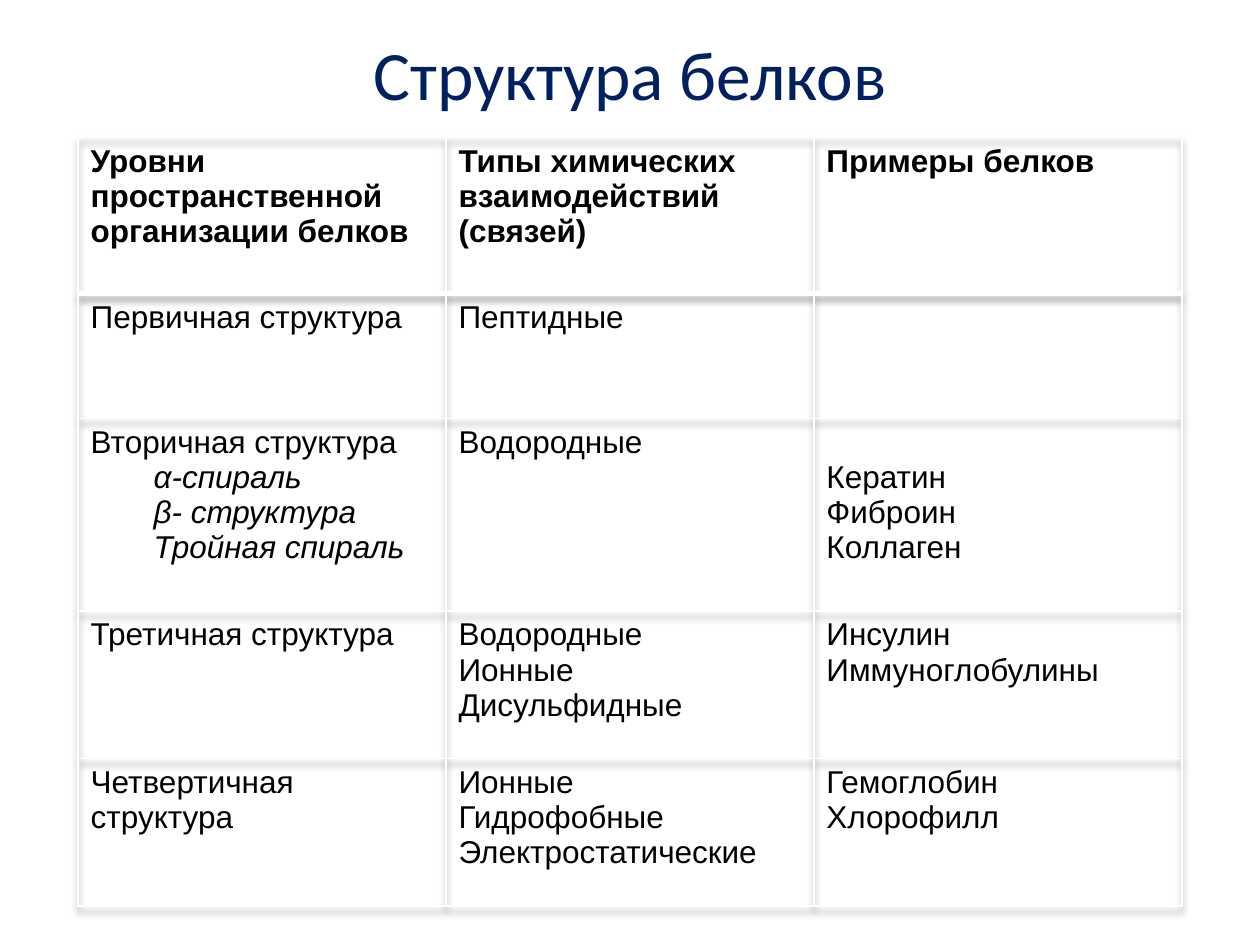
import pptx
import pptx.util
import pptx.dml.color
import pptx.enum.text
import pptx.oxml
import pptx.oxml.ns
from lxml import etree
from pptx.util import Inches, Pt

NAVY = pptx.dml.color.RGBColor(0x00, 0x20, 0x60)
BLACK = pptx.dml.color.RGBColor(0x00, 0x00, 0x00)
WHITE = pptx.dml.color.RGBColor(0xFF, 0xFF, 0xFF)

TITLE = "Структура белков"
ROWS = [
    (1.24, [["Уровни пространственной организации белков"],
            ["Типы химических взаимодействий (связей)"],
            ["Примеры белков"]]),
    (0.99, [["Первичная структура"], ["Пептидные"], []]),
    (1.53, [["Вторичная структура", "α-спираль", "β- структура", "Тройная спираль"],
            ["Водородные"],
            ["Кератин", "Фиброин", "Коллаген"]]),
    (1.17, [["Третичная структура"],
            ["Водородные", "Ионные", "Дисульфидные"],
            ["Инсулин", "Иммуноглобулины"]]),
    (1.17, [["Четвертичная структура"],
            ["Ионные", "Гидрофобные", "Электростатические"],
            ["Гемоглобин", "Хлорофилл"]]),
]
COLUMN_WIDTH = 2.92
LINE_HEIGHT = 0.28
PROTEINS_BESIDE_SUBTYPES = (2, 2)
SHADOW = (
    '<a:effectLst %s><a:outerShdw blurRad="50800" dist="38100" dir="5400000" '
    'algn="t" rotWithShape="0"><a:srgbClr val="000000"><a:alpha val="40000"/>'
    '</a:srgbClr></a:outerShdw></a:effectLst>' % pptx.oxml.ns.nsdecls("a")
)


def add_border(cell, side, width):
    properties = cell._tc.get_or_add_tcPr()
    line = etree.SubElement(properties, pptx.oxml.ns.qn("a:ln" + side), w=str(Pt(width)))
    fill = etree.SubElement(line, pptx.oxml.ns.qn("a:solidFill"))
    etree.SubElement(fill, pptx.oxml.ns.qn("a:srgbClr"), val=str(WHITE))


def fill_cell(cell, lines, row):
    frame = cell.text_frame
    for index, line in enumerate(lines or [""]):
        para = frame.paragraphs[0] if index == 0 else frame.add_paragraph()
        para.text = line
        subtype = index > 0 and lines[0] == "Вторичная структура"
        if subtype:
            para.level = 1
            properties = para._p.get_or_add_pPr()
            properties.set("marL", str(Inches(0.5)))
            properties.set("indent", "0")
        para.font.name = "Arial"
        para.font.size = Pt(18)
        para.font.bold = row == 0
        para.font.italic = subtype
        para.font.color.rgb = BLACK


deck = pptx.Presentation()
deck.slide_width, deck.slide_height = Inches(10), Inches(7.5)
page = deck.slides.add_slide(deck.slide_layouts[6])

box = page.shapes.add_textbox(Inches(0.5), Inches(0.3), Inches(9), Inches(0.56))
box.text_frame.word_wrap = True
box.text_frame.vertical_anchor = pptx.enum.text.MSO_ANCHOR.MIDDLE
para = box.text_frame.paragraphs[0]
para.text = TITLE
para.alignment = pptx.enum.text.PP_ALIGN.CENTER
para.font.name = "Calibri"
para.font.size = Pt(39.6)
para.font.color.rgb = NAVY

column_count = len(ROWS[0][1])
table = page.shapes.add_table(
    len(ROWS), column_count, Inches(0.62), Inches(1.09),
    Inches(COLUMN_WIDTH * column_count), Inches(sum(height for height, _ in ROWS)),
).table
table.first_row = False
table.horz_banding = False
table._tbl.tblPr.insert(0, pptx.oxml.parse_xml(SHADOW))
for column in table.columns:
    column.width = Inches(COLUMN_WIDTH)

for row, (height, texts) in enumerate(ROWS):
    table.rows[row].height = Inches(height)
    for column, lines in enumerate(texts):
        cell = table.cell(row, column)
        fill_cell(cell, lines, row)
        if (row, column) == PROTEINS_BESIDE_SUBTYPES:
            cell.margin_top = Inches(0.05 + LINE_HEIGHT)
        for side in "LRTB":
            header_edge = (row, side) in [(0, "B"), (1, "T")]
            add_border(cell, side, 3 if header_edge else 1)
        cell.fill.background()

deck.save("out.pptx")
